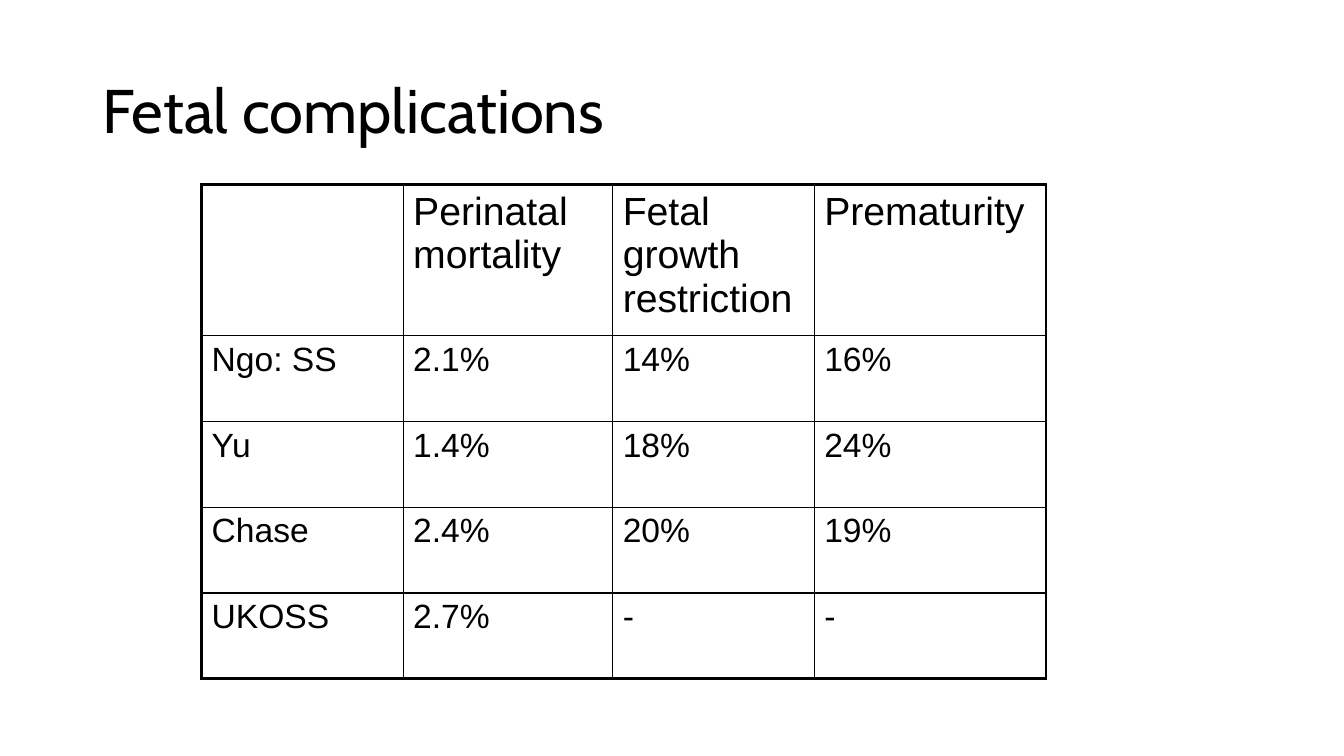
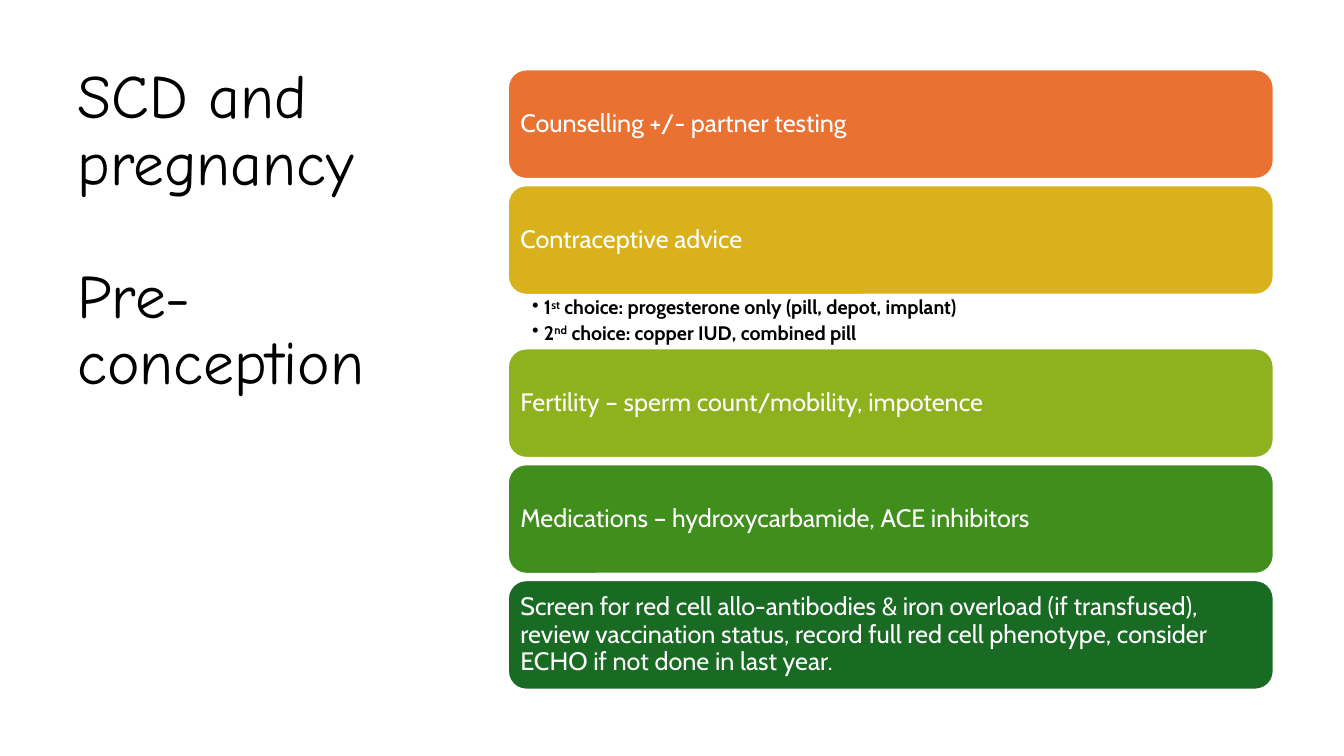
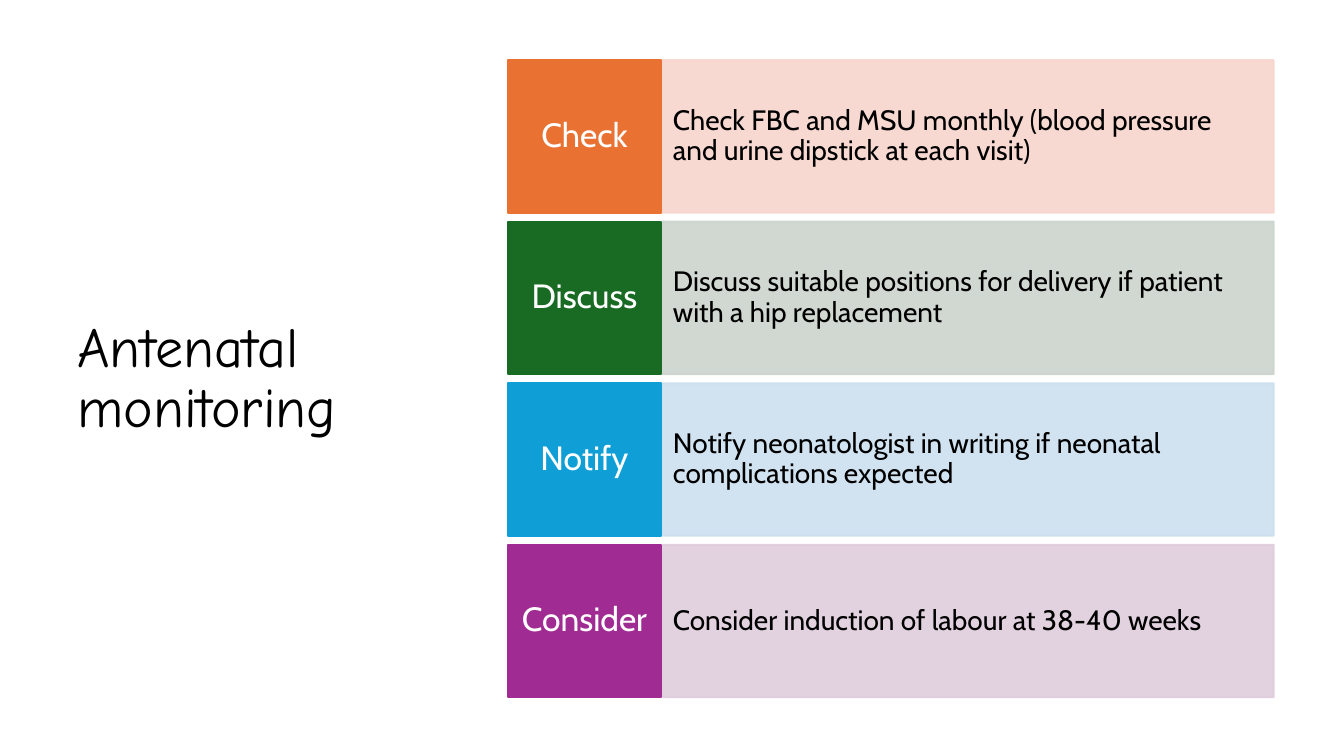
from lxml import etree
from pptx import Presentation
from pptx.dml.color import RGBColor
from pptx.enum.shapes import MSO_SHAPE
from pptx.enum.text import MSO_ANCHOR, PP_ALIGN
from pptx.oxml.ns import qn
from pptx.util import Cm, Pt

RECT, ROUND = MSO_SHAPE.RECTANGLE, MSO_SHAPE.ROUNDED_RECTANGLE
TOP, MIDDLE = MSO_ANCHOR.TOP, MSO_ANCHOR.MIDDLE
LEFT, CENTER = PP_ALIGN.LEFT, PP_ALIGN.CENTER
BLACK, WHITE = "000000", "FFFFFF"
ORANGE, GREEN = "E97132", "196B24"
SANS, HAND = "Cabin", "Comic Neue"


def rgb(code):
    return RGBColor.from_string(code)


def write(frame, lines, face, size, color, align=LEFT, anchor=MIDDLE, pads=(0.25, 0.13), gap=0):
    frame.word_wrap = True
    frame.vertical_anchor = anchor
    frame.margin_left = frame.margin_right = Cm(pads[0])
    frame.margin_top = frame.margin_bottom = Cm(pads[1])
    for i, line in enumerate(lines):
        par = frame.add_paragraph() if i else frame.paragraphs[0]
        par.text = line
        par.alignment = align
        par.line_spacing = 0.9
        if i:
            par.space_before = Pt(gap)
        par.font.name = face
        par.font.size = Pt(size)
        par.font.color.rgb = rgb(color)


deck = Presentation()
deck.slide_width, deck.slide_height = Cm(33.87), Cm(19.05)

side = (1.7, 1.52, 9.7, 16.08)
titles = [
    (["Fetal complications"], (2.33, 1.02, 29.21, 3.68), SANS, 44, MIDDLE),
    (["SCD and pregnancy", "Pre-conception"], side, HAND, 44, TOP),
    (["Antenatal monitoring"], side, HAND, 40, MIDDLE),
]
slides = []
for lines, place, face, size, anchor in titles:
    slide = deck.slides.add_slide(deck.slide_layouts[6])
    box = slide.shapes.add_textbox(*[Cm(n) for n in place])
    write(box.text_frame, lines, face, size, BLACK, anchor=anchor, gap=47.5)
    slides.append(slide)
fetal, before, care = slides

data = [
    ["", "Perinatal mortality", "Fetal growth restriction", "Prematurity"],
    ["Ngo: SS", "2.1%", "14%", "16%"],
    ["Yu", "1.4%", "18%", "24%"],
    ["Chase", "2.4%", "20%", "19%"],
    ["UKOSS", "2.7%", "-", "-"],
]
widths = [5.08, 5.28, 5.08, 5.84]
heights = [3.81] + [2.16] * 4
table = fetal.shapes.add_table(
    len(data), len(widths), Cm(5.08), Cm(4.65), Cm(sum(widths)), Cm(sum(heights))
).table
table.first_row = table.horz_banding = False
for col, width in zip(table.columns, widths):
    col.width = Cm(width)
for r, row in enumerate(data):
    table.rows[r].height = Cm(heights[r])
    for c, text in enumerate(row):
        cell = table.cell(r, c)
        cell.text = text
        font = cell.text_frame.paragraphs[0].font
        font.name = "Arial"
        font.size = Pt(24 if r else 28)
        font.color.rgb = rgb(BLACK)
        props = cell._tc.get_or_add_tcPr()
        edges = [("L", c == 0), ("R", False), ("T", r == 0), ("B", r == len(data) - 1)]
        for edge, thick in edges:
            line = etree.SubElement(props, qn("a:ln" + edge), w=str(Pt(2.25 if thick else 1)))
            fill = etree.SubElement(line, qn("a:solidFill"))
            etree.SubElement(fill, qn("a:srgbClr"), val=BLACK)
        cell.fill.background()

panel, wide = 12.8, 19.3

advice = [
    ("Counselling +/- partner testing", ORANGE, []),
    ("Contraceptive advice", "D8B11D", [
        ("1", "st", " choice: progesterone only (pill, depot, implant)"),
        ("2", "nd", " choice: copper IUD, combined pill"),
    ]),
    ("Fertility – sperm count/mobility, impotence", "8EB21E", []),
    ("Medications – hydroxycarbamide, ACE inhibitors", "408E1C", []),
    ("Screen for red cell allo-antibodies & iron overload (if transfused), review vaccination "
     "status, record full red cell phenotype, consider ECHO if not done in last year.", GREEN, []),
]
tall, top = 2.76, 1.75
for text, color, points in advice:
    bar = before.shapes.add_shape(ROUND, Cm(panel), Cm(top), Cm(wide), Cm(tall))
    bar.shadow.inherit = False
    bar.fill.solid()
    bar.fill.fore_color.rgb = rgb(color)
    bar.line.color.rgb = rgb(WHITE)
    bar.line.width = Pt(1.5)
    write(bar.text_frame, [text], SANS, 18, WHITE, pads=(0.18, 0.18))
    top += tall
    if not points:
        top += 0.16
        continue
    box = before.shapes.add_textbox(Cm(panel), Cm(top), Cm(wide), Cm(1.35))
    frame = box.text_frame
    frame.word_wrap = True
    frame.margin_left, frame.margin_right = Cm(0.61), Cm(0.36)
    frame.margin_top = frame.margin_bottom = Cm(0.08)
    for i, parts in enumerate(points):
        par = frame.add_paragraph() if i else frame.paragraphs[0]
        props = par._p.get_or_add_pPr()
        props.set("marL", str(Cm(0.3)))
        props.set("indent", str(-Cm(0.3)))
        etree.SubElement(props, qn("a:buChar"), char="•")
        par.line_spacing = 0.9
        par.space_after = Pt(2.8)
        par.font.name = SANS
        par.font.size = Pt(14)
        par.font.bold = True
        par.font.color.rgb = rgb(BLACK)
        for part in parts:
            run = par.add_run()
            run.text = part
            if part in ("st", "nd"):
                run._r.get_or_add_rPr().set("baseline", "30000")
    top += 1.35

steps = [
    ("Check", "Check FBC and MSU monthly (blood pressure and urine dipstick at each visit)",
     ORANGE, "F7D5CE"),
    ("Discuss", "Discuss suitable positions for delivery if patient with a hip replacement",
     GREEN, "CCD4CD"),
    ("Notify", "Notify neonatologist in writing if neonatal complications expected",
     "0F9ED5", "CCDFEF"),
    ("Consider", "Consider induction of labour at 38-40 weeks", "A02B93", "DFCDDC"),
]
tag = 3.86
for i, (name, note, dark, pale) in enumerate(steps):
    top = 1.52 + i * 4.07
    parts = [
        (panel + tag, wide - tag, pale, note, 20, BLACK, LEFT, (0.3, 0.97)),
        (panel, tag, dark, name, 24, WHITE, CENTER, (0.2, 0.38)),
    ]
    for left, width, color, text, size, ink, align, pads in parts:
        block = care.shapes.add_shape(RECT, Cm(left), Cm(top), Cm(width), Cm(3.84))
        block.shadow.inherit = False
        block.fill.solid()
        block.fill.fore_color.rgb = rgb(color)
        block.line.color.rgb = rgb(color)
        block.line.width = Pt(1.5)
        if color == pale:
            for tint in block._element.spPr.iter(qn("a:srgbClr")):
                etree.SubElement(tint, qn("a:alpha"), val="90000")
        write(block.text_frame, [text], SANS, size, ink, align, pads=pads)

deck.save("out.pptx")
